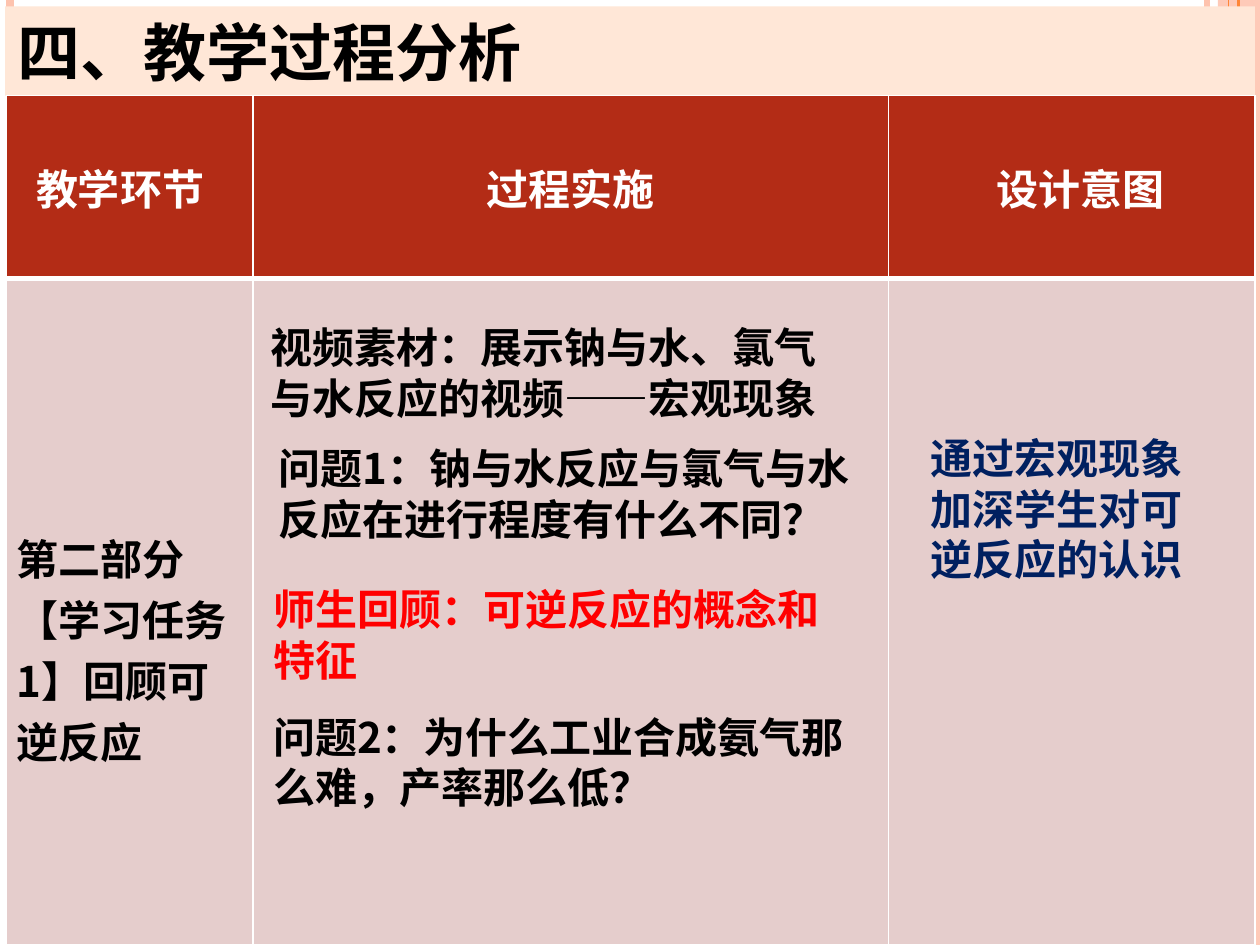
from lxml import etree
from pptx import Presentation
from pptx.dml.color import RGBColor
from pptx.enum import shapes, text
from pptx.oxml import ns
from pptx.util import Pt

FONT = "Noto Sans CJK SC"
COLORS = {
    "peach": "FEC3AE", "orange": "FE8637", "title_band": "FFE7D7",
    "header": "B32C16", "body": "E5CDCC", "black": "000000",
    "white": "FFFFFF", "red": "FF0000", "navy": "002060",
}
RULES = [  # x, width, colour
    (689.76, 3, "peach"), (5.76, 4.5, "peach"),
    (707.76, 1.5, "orange"), (702, 0.75, "orange"),
]
HEADERS = [  # label, left inset, alignment
    ("教学环节", 17, text.PP_ALIGN.LEFT),
    ("过程实施", 6, text.PP_ALIGN.CENTER),
    ("设计意图", 16, text.PP_ALIGN.CENTER),
]
COLUMN_WIDTHS = (141.1, 362.9, 209.5)
ROW_HEIGHTS = (104.4, 380.9)
NOTES = [  # left, top, width, height, wording, colour
    (149, 400.3, 350, 65.5, "问题2：为什么工业合成氨气那么难，产率那么低？", "black"),
    (524.9, 241.2, 177.8, 94.3, "通过宏观现象加深学生对可逆反应的认识", "navy"),
    (147.6, 177.8, 350, 65.5, "视频素材：展示钠与水、氯气与水反应的视频——宏观现象", "black"),
    (151.9, 247, 350, 65.5, "问题1：钠与水反应与氯气与水反应在进行程度有什么不同？", "black"),
    (149, 327.6, 350, 65.5, "师生回顾：可逆反应的概念和特征", "red"),
]


def rgb(name):
    return RGBColor.from_string(COLORS[name])


def fill(obj, color):
    obj.fill.solid()
    obj.fill.fore_color.rgb = rgb(color)


def format_text(tf, size, color, align=text.PP_ALIGN.LEFT):
    for p in tf.paragraphs:
        p.alignment = align
        for r in p.runs:
            r.font.size = Pt(size)
            r.font.bold = True
            r.font.name = FONT
            r.font.color.rgb = rgb(color)
            ea = etree.SubElement(r.font._element, ns.qn("a:ea"))
            ea.set("typeface", FONT)


def add_rule(slide, x, width, color):
    line = slide.shapes.add_connector(
        shapes.MSO_CONNECTOR.STRAIGHT, Pt(x), Pt(0), Pt(x), Pt(540))
    line.line.width = Pt(width)
    line.line.color.rgb = rgb(color)
    etree.SubElement(line._element.spPr, ns.qn("a:effectLst"))


def add_side_band(slide):
    sp = slide.shapes.add_shape(
        shapes.MSO_SHAPE.RECTANGLE, Pt(696), Pt(0), Pt(24), Pt(540))
    sp.shadow.inherit = False
    fill(sp, "peach")
    sp.line.fill.background()
    color = sp._element.spPr.find(".//" + ns.qn("a:srgbClr"))
    etree.SubElement(color, ns.qn("a:alpha")).set("val", "87000")


def format_title(slide):
    title = slide.shapes.title
    title.left, title.top, title.width, title.height = (
        Pt(2.9), Pt(3.6), Pt(714.2), Pt(51.1))
    fill(title, "title_band")
    tf = title.text_frame
    tf.text = "四、教学过程分析"
    tf.margin_top = tf.margin_bottom = 0
    tf.vertical_anchor = text.MSO_ANCHOR.MIDDLE
    format_text(tf, 36, "black")
    # Bring the title band in front of the side rules
    slide.shapes._spTree.append(title._element)


def set_borders(cell, **widths):
    """Draw white borders; widths are given by side as L, R, T, B."""
    tc_pr = cell._tc.get_or_add_tcPr()
    for i, (side, width) in enumerate(widths.items()):
        ln = etree.Element(ns.qn("a:ln" + side), w=str(Pt(width)))
        solid = etree.SubElement(ln, ns.qn("a:solidFill"))
        etree.SubElement(solid, ns.qn("a:srgbClr"), val=COLORS["white"])
        tc_pr.insert(i, ln)


def add_process_table(slide):
    frame = slide.shapes.add_table(
        2, 3, Pt(3.6), Pt(54.7), Pt(sum(COLUMN_WIDTHS)), Pt(sum(ROW_HEIGHTS)))
    table = frame.table
    for column, width in zip(table.columns, COLUMN_WIDTHS):
        column.width = Pt(width)
    for row, height in zip(table.rows, ROW_HEIGHTS):
        row.height = Pt(height)
    for cell in table.iter_cells():
        cell.margin_left = cell.margin_right = Pt(5.8)

    for i, (label, inset, align) in enumerate(HEADERS):
        head, body = table.cell(0, i), table.cell(1, i)
        head.text = label
        head.margin_left = Pt(inset)
        head.vertical_anchor = text.MSO_ANCHOR.MIDDLE
        format_text(head.text_frame, 24, "white", align)
        fill(head, "header")
        fill(body, "body")
        set_borders(head, L=1, R=1, T=1, B=3)
        set_borders(body, L=1, R=1, T=3, B=1)

    stage = table.cell(1, 0)
    stage.text = "第二部分\n【学习任务1】回顾可逆反应"
    stage.margin_top = Pt(142)
    format_text(stage.text_frame, 24, "black")


def add_note(slide, left, top, width, height, wording, color):
    box = slide.shapes.add_textbox(Pt(left), Pt(top), Pt(width), Pt(height))
    tf = box.text_frame
    tf.word_wrap = True
    tf.margin_top = Pt(6)
    tf.text = wording
    tf.paragraphs[0].line_spacing = Pt(28.8)
    format_text(tf, 24, color)


def main():
    prs = Presentation()
    prs.slide_width, prs.slide_height = Pt(720), Pt(540)
    slide = prs.slides.add_slide(prs.slide_layouts[5])
    add_side_band(slide)
    for rule in RULES:
        add_rule(slide, *rule)
    format_title(slide)
    add_process_table(slide)
    for note in NOTES:
        add_note(slide, *note)
    prs.save("out.pptx")


if __name__ == "__main__":
    main()
